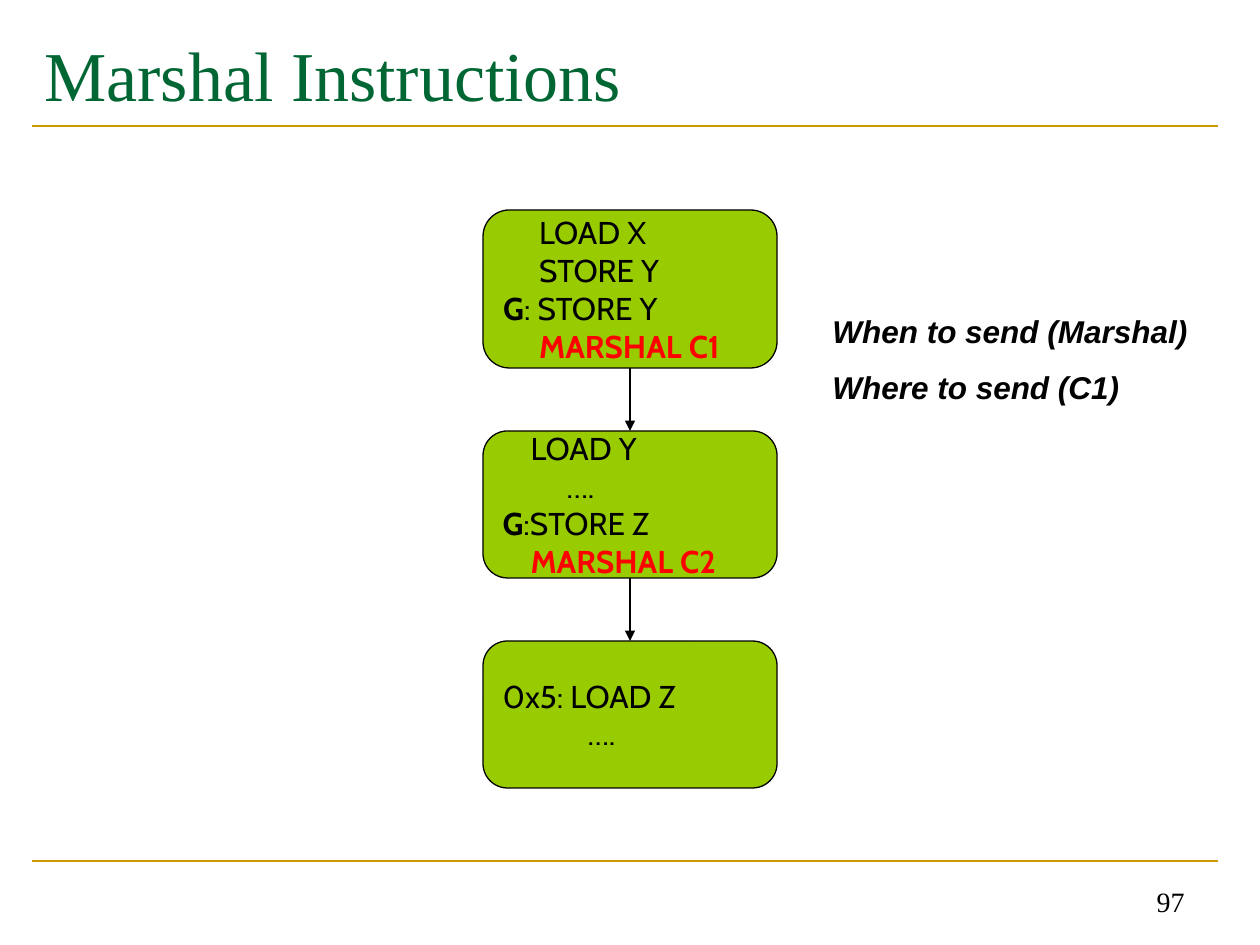
"""Build the Marshal Instructions slide."""
from dataclasses import dataclass

from lxml import etree
from pptx import Presentation
from pptx.dml.color import RGBColor
from pptx.enum.shapes import MSO_CONNECTOR, MSO_SHAPE
from pptx.enum.text import MSO_ANCHOR, MSO_AUTO_SIZE, PP_ALIGN
from pptx.oxml.ns import qn
from pptx.util import Pt

STRAIGHT = MSO_CONNECTOR.STRAIGHT
ROUNDED = MSO_SHAPE.ROUNDED_RECTANGLE
LEFT, RIGHT = PP_ALIGN.LEFT, PP_ALIGN.RIGHT
MIDDLE, BOTTOM = MSO_ANCHOR.MIDDLE, MSO_ANCHOR.BOTTOM
NO_AUTOFIT = MSO_AUTO_SIZE.NONE
TOP_SITE, BOTTOM_SITE = 0, 2
EMU_PER_INCH, PX_PER_INCH = 914400, 126


@dataclass(frozen=True)
class Theme:
    """Colours, typefaces and sizes of the slide."""
    ink: str = "000000"
    title: str = "006633"
    rule: str = "CC9900"
    block: str = "99CC00"
    marshal: str = "FF0000"
    serif: str = "Times New Roman"
    sans: str = "Arial"
    code: str = "Cabin"
    title_size: int = 40
    text_size: int = 18
    number_size: int = 16
    note_gap: int = 10
    rule_width: float = 1.5
    outline_width: float = 0.75


def px(length):
    """Turn pixels into EMU."""
    return round(length * EMU_PER_INCH / PX_PER_INCH)


class SlideBuilder:
    """Draws styled elements on the current slide."""

    def __init__(self, slide, theme):
        """Keep the slide and its style."""
        self.slide = slide
        self.theme = theme

    def style(self, paragraph, face, size, color, align=LEFT):
        """Set the common font and alignment of a paragraph."""
        paragraph.alignment = align
        font = paragraph.font
        font.name, font.size = face, Pt(size)
        font.color.rgb = RGBColor.from_string(color)
        return font

    def title(self, text, left, top, width, height):
        """Fill and place the title placeholder."""
        shape = self.slide.shapes.title
        shape.left, shape.top = px(left), px(top)
        shape.width, shape.height = px(width), px(height)
        frame = shape.text_frame
        frame.text = text
        frame.auto_size = NO_AUTOFIT
        frame.vertical_anchor = MIDDLE
        self.style(frame.paragraphs[0], self.theme.serif,
                   self.theme.title_size, self.theme.title)

    def text_box(self, left, top, width, height, anchor):
        """Add a wrapping text box and return its frame."""
        shape = self.slide.shapes.add_textbox(px(left), px(top), px(width), px(height))
        frame = shape.text_frame
        frame.word_wrap = True
        frame.vertical_anchor = anchor
        return frame

    def page_number(self, text, left, top, width, height):
        """Add the page number."""
        frame = self.text_box(left, top, width, height, BOTTOM)
        frame.text = text
        self.style(frame.paragraphs[0], self.theme.serif,
                   self.theme.number_size, self.theme.ink, RIGHT)

    def notes(self, lines, left, top, width, height):
        """Add emphasised remarks, one a paragraph."""
        frame = self.text_box(left, top, width, height, MIDDLE)
        frame.text = "\n".join(lines)
        for index, paragraph in enumerate(frame.paragraphs):
            font = self.style(paragraph, self.theme.sans,
                              self.theme.text_size, self.theme.ink)
            font.bold = font.italic = True
            paragraph.space_before = Pt(self.theme.note_gap if index else 0)

    def code_block(self, lines, left, top, width, height):
        """Add a rounded block of (indent, label, code, is_marshal) lines."""
        shape = self.slide.shapes.add_shape(ROUNDED, px(left), px(top), px(width), px(height))
        shape.shadow.inherit = False
        shape.fill.solid()
        shape.fill.fore_color.rgb = RGBColor.from_string(self.theme.block)
        shape.line.color.rgb = RGBColor.from_string(self.theme.ink)
        shape.line.width = Pt(self.theme.outline_width)
        frame = shape.text_frame
        frame.word_wrap = True
        frame.vertical_anchor = MIDDLE
        frame.text = "\n".join([""] * len(lines))
        for paragraph, (indent, label, code, is_marshal) in zip(frame.paragraphs, lines):
            color = self.theme.marshal if is_marshal else self.theme.ink
            font = self.style(paragraph, self.theme.code, self.theme.text_size, color)
            font.bold = is_marshal
            paragraph._p.get_or_add_pPr().set("marL", str(px(indent)))
            if label:
                run = paragraph.add_run()
                run.text = label
                run.font.bold = True
            paragraph.add_run().text = code
        return shape

    def line(self, start, end, color, width):
        """Add a straight line without a shadow."""
        connector = self.slide.shapes.add_connector(
            STRAIGHT, px(start[0]), px(start[1]), px(end[0]), px(end[1]))
        connector.line.color.rgb = RGBColor.from_string(color)
        connector.line.width = Pt(width)
        etree.SubElement(connector._element.spPr, qn("a:effectLst"))
        return connector

    def rule(self, left, right, y):
        """Add a horizontal rule."""
        self.line((left, y), (right, y), self.theme.rule, self.theme.rule_width)

    def arrow(self, upper, lower):
        """Join two blocks with a downward arrow."""
        connector = self.line((0, 0), (0, 0), self.theme.ink, self.theme.outline_width)
        connector.begin_connect(upper, BOTTOM_SITE)
        connector.end_connect(lower, TOP_SITE)
        outline = connector._element.spPr.find(qn("a:ln"))
        etree.SubElement(outline, qn("a:tailEnd"), type="triangle")


def main():
    """Build and save the presentation."""
    presentation = Presentation()
    presentation.slide_width, presentation.slide_height = px(1260), px(945)
    slide = presentation.slides.add_slide(presentation.slide_layouts[5])
    builder = SlideBuilder(slide, Theme())

    for y in (861, 126):
        builder.rule(32, 1218, y)
    builder.page_number("97", 903, 861, 294, 63)
    builder.title("Marshal Instructions", 32, 21, 1187, 105)

    blocks = [
        (158, [(36, "", "LOAD X", False), (36, "", "STORE Y", False),
               (0, "G", ": STORE Y", False), (36, "", "MARSHAL C1", True)]),
        (147, [(28, "", "LOAD Y", False), (64, "", "….", False),
               (0, "G", ":STORE Z", False), (28, "", "MARSHAL C2", True)]),
        (147, [(0, "", "0x5: LOAD Z", False), (85, "", "….", False)]),
    ]
    top, gap = 210, 63
    shapes = []
    for height, lines in blocks:
        shapes.append(builder.code_block(lines, 483, top, 294, height))
        top += height + gap
    for upper, lower in zip(shapes, shapes[1:]):
        builder.arrow(upper, lower)

    builder.notes(["When to send (Marshal)", "Where to send (C1)"], 820, 305, 411, 108)
    presentation.save("out.pptx")


if __name__ == "__main__":
    main()
